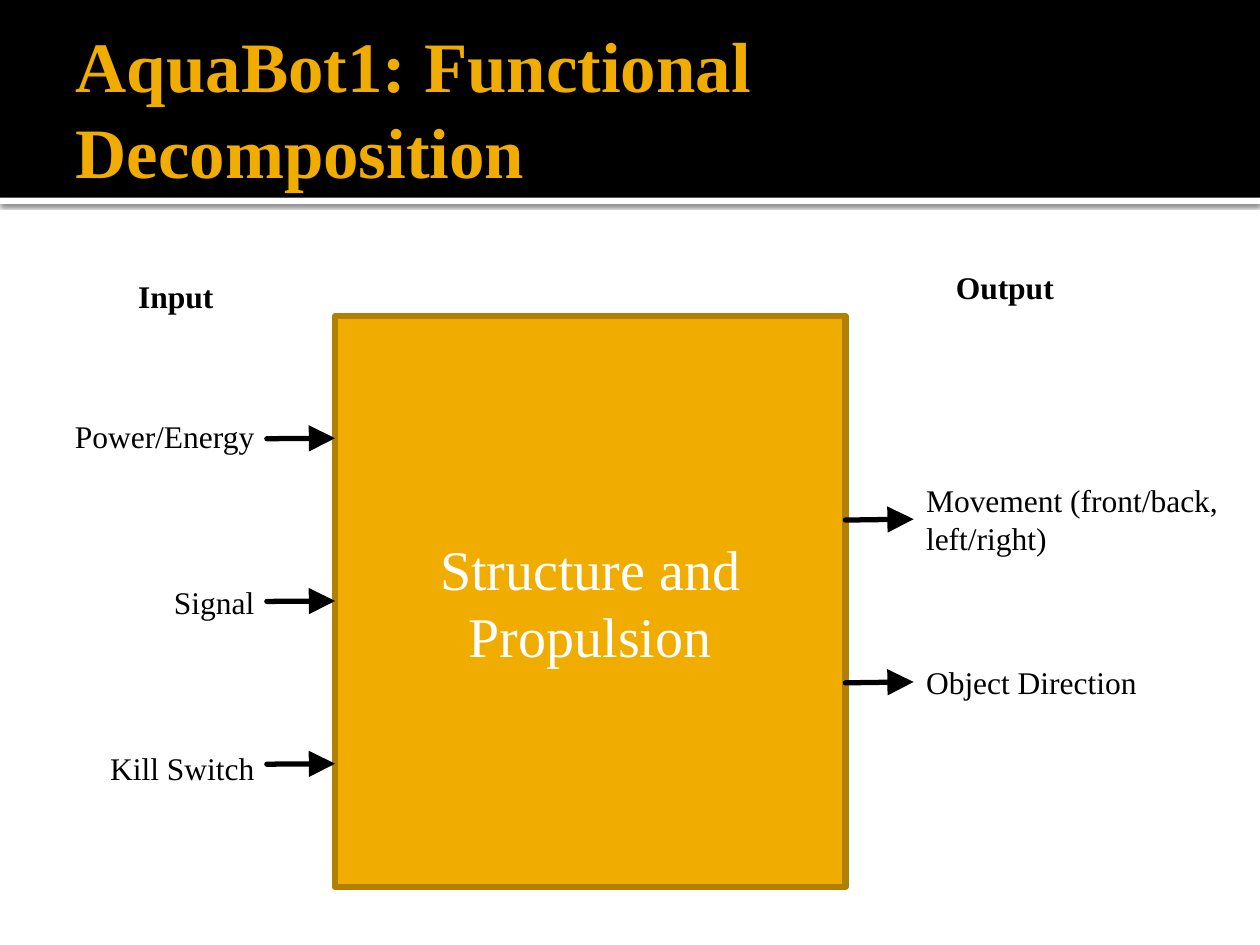
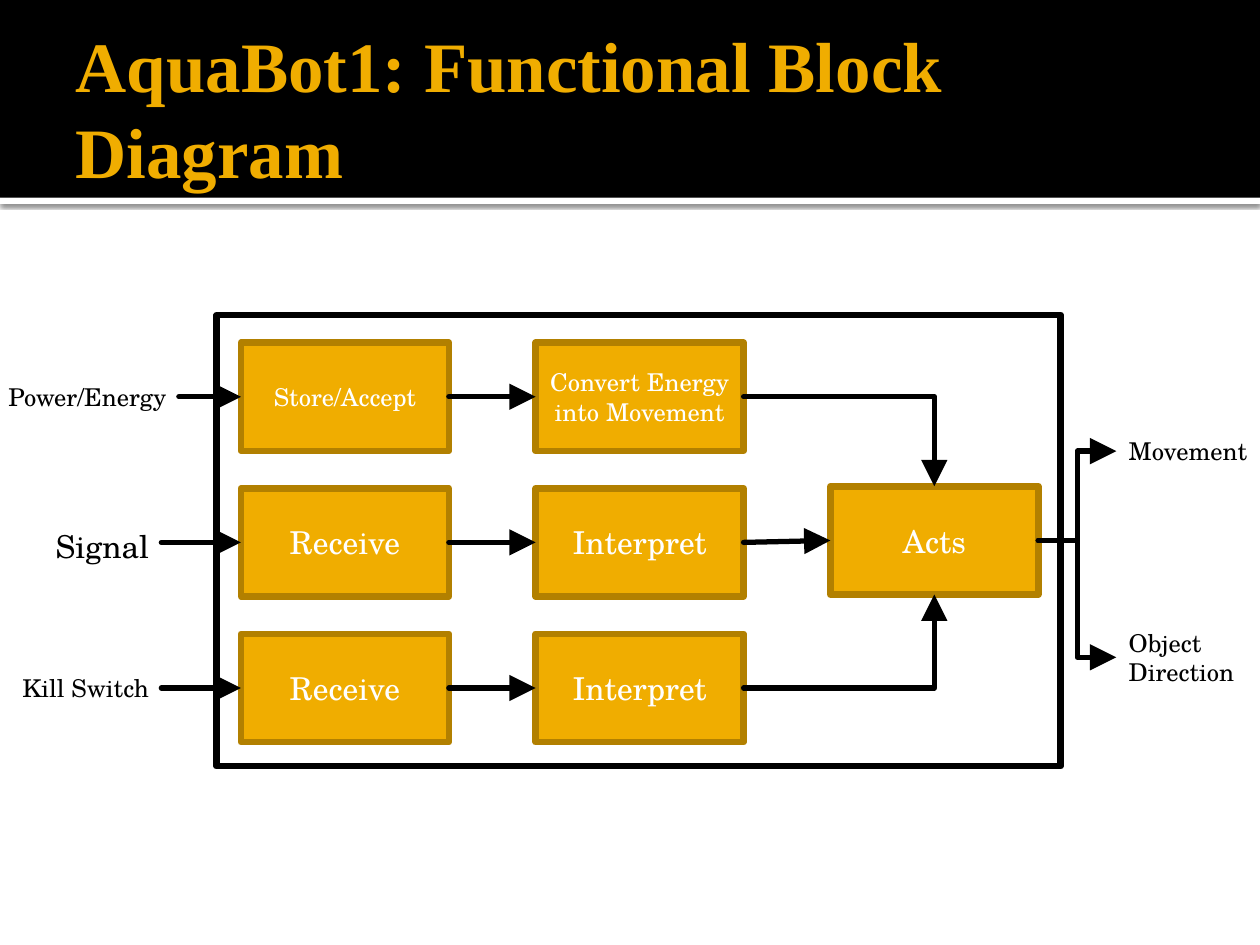
from lxml import etree
from pptx import Presentation
from pptx.dml.color import RGBColor
from pptx.enum.shapes import MSO_CONNECTOR, MSO_SHAPE
from pptx.enum.text import MSO_ANCHOR, MSO_AUTO_SIZE, PP_ALIGN
from pptx.oxml.ns import qn
from pptx.util import Pt

RECTANGLE = MSO_SHAPE.RECTANGLE
STRAIGHT, ELBOW = MSO_CONNECTOR.STRAIGHT, MSO_CONNECTOR.ELBOW
LEFT, CENTER, RIGHT = PP_ALIGN.LEFT, PP_ALIGN.CENTER, PP_ALIGN.RIGHT
MIDDLE = MSO_ANCHOR.MIDDLE
NO_FIT, GROW = MSO_AUTO_SIZE.NONE, MSO_AUTO_SIZE.SHAPE_TO_FIT_TEXT

BLACK = RGBColor(0x00, 0x00, 0x00)
WHITE = RGBColor(0xFF, 0xFF, 0xFF)
GOLD = RGBColor(0xF0, 0xAD, 0x00)
DARK_GOLD = RGBColor(0xB2, 0x80, 0x00)

SERIF = "Times New Roman"
SCHOOL = "TeX Gyre Schola"

PROJECT = "AquaBot1"
SLIDE_WIDTH, SLIDE_HEIGHT = 720, 540
BAND_HEIGHT = 113
OUTLINE, ARROW_LINE = 3.78, 3
RIGHT_SITE, LEFT_SITE = 3, 1


def points(*lengths):
    return [Pt(length) for length in lengths]


def write(frame, text, font, size, color, align=LEFT, bold=False):
    frame.word_wrap = True
    para = frame.paragraphs[0]
    para.alignment = align
    span = para.add_run()
    span.text = text
    span.font.name = font
    span.font.size = Pt(size)
    span.font.bold = bold
    span.font.color.rgb = color
    return para


def add_box(page, box, fill, line=None):
    shape = page.shapes.add_shape(RECTANGLE, *points(*box))
    shape.shadow.inherit = False
    shape.fill.solid()
    shape.fill.fore_color.rgb = fill
    if line is None:
        shape.line.fill.background()
    else:
        shape.line.color.rgb = line
        shape.line.width = Pt(OUTLINE)
    return shape


def add_block(page, box, text, font, size):
    block = add_box(page, box, GOLD, DARK_GOLD)
    block.text_frame.vertical_anchor = MIDDLE
    write(block.text_frame, text, font, size, WHITE, CENTER)
    return block


def add_label(page, box, text, font, size, align=LEFT, bold=False):
    frame = page.shapes.add_textbox(*points(*box)).text_frame
    write(frame, text, font, size, BLACK, align, bold)
    frame.auto_size = GROW


def add_arrow(page, start, end, kind=STRAIGHT, corner=False):
    arrow = page.shapes.add_connector(kind, *points(*start, *end))
    arrow.line.color.rgb = BLACK
    arrow.line.width = Pt(ARROW_LINE)
    properties = arrow.element.spPr
    if corner:
        properties.find(qn("a:prstGeom")).set("prst", "bentConnector2")
    line = properties.find(qn("a:ln"))
    line.set("cap", "rnd")
    etree.SubElement(line, qn("a:round"))
    etree.SubElement(line, qn("a:tailEnd"), type="triangle", w="lg", len="lg")
    etree.SubElement(properties, qn("a:effectLst"))
    return arrow


def link_blocks(page, source, target):
    arrow = add_arrow(page, (0, 0), (0, 0))
    arrow.begin_connect(source, RIGHT_SITE)
    arrow.end_connect(target, LEFT_SITE)


def add_bands(page, layout):
    stripe = add_box(page, (0, BAND_HEIGHT, SLIDE_WIDTH, 3.6), WHITE)
    effects = stripe.element.spPr.find(qn("a:effectLst"))
    shadow = etree.SubElement(effects, qn("a:outerShdw"), blurRad=str(Pt(2.5)),
                              dist=str(Pt(0.8)), dir="5400000", rotWithShape="0")
    color = etree.SubElement(shadow, qn("a:srgbClr"), val=str(BLACK))
    etree.SubElement(color, qn("a:alpha"), val="60000")
    header = add_box(page, (0, 0, SLIDE_WIDTH, BAND_HEIGHT), BLACK)
    first = layout.placeholders[0].element
    for band in (stripe, header):
        first.addprevious(band.element)


def add_title(page, text):
    title = page.shapes.title
    title.left, title.top, title.width, title.height = points(36, 11.7, 648, 98.64)
    frame = title.text_frame
    frame.auto_size = NO_FIT
    frame.vertical_anchor = MIDDLE
    frame.margin_left = Pt(7.2)
    frame.margin_top = frame.margin_right = frame.margin_bottom = Pt(3.6)
    para = write(frame, text, SERIF, 40.5, GOLD, bold=True)
    para.line_spacing = Pt(49)


def draw_decomposition(page, box):
    left, top, width, height = box
    right = left + width
    reach, label_width, label_height, step = 39, 182.2, 28.8, 93
    add_block(page, box, "Structure and Propulsion", SERIF, 32)

    for row, text in enumerate(("Power/Energy", "Signal", "Kill Switch")):
        y = top + 70 + row * step
        add_arrow(page, (left - reach, y), (left, y - 0.3))
        label_top = top + 54 + row * 95
        add_label(page, (left - reach - label_width, label_top, label_width, label_height),
                  text, SERIF, 18, RIGHT)

    outputs = (("Movement (front/back, left/right)", 90.7, 51.1),
               ("Object Direction", 194.4, label_height))
    for row, (text, offset, text_height) in enumerate(outputs):
        y = top + 116.5 + row * step
        add_arrow(page, (right, y), (right + reach, y - 0.5))
        add_label(page, (right + reach, top + offset, label_width, text_height),
                  text, SERIF, 18)

    headings = (("Input", left - label_width, 25.9), ("Output", right, 30.9))
    for text, x, rise in headings:
        add_label(page, (x, top - rise, label_width, label_height),
                  text, SERIF, 18, CENTER, True)


def draw_block_diagram(page, box):
    left, top, width, height = box
    block_width, block_height = 118.8, 61.9
    column_step, row_step = 168.4, 83.2
    columns = [left + 13.9 + column * column_step for column in range(3)]
    rows = [top + 15.8 + row * row_step for row in range(3)]
    centers = [y + block_height / 2 for y in rows]
    add_box(page, box, WHITE, BLACK)

    stages = (("Store/Accept", "Convert Energy into Movement", 14),
              ("Receive", "Interpret", 18),
              ("Receive", "Interpret", 18))
    second_stage = []
    for y, (first_text, second_text, size) in zip(rows, stages):
        first, second = [
            add_block(page, (x, y, block_width, block_height), text, SCHOOL, size)
            for x, text in zip(columns, (first_text, second_text))]
        link_blocks(page, first, second)
        second_stage.append(second)

    acts_top = rows[1] - 1.1
    acts = add_block(page, (columns[2], acts_top, block_width, block_height),
                     "Acts", SCHOOL, 18)
    link_blocks(page, second_stage[1], acts)
    acts_middle = columns[2] + block_width / 2
    second_right = columns[1] + block_width
    for y, end in ((centers[0], acts_top), (centers[2], acts_top + block_height)):
        add_arrow(page, (second_right, y), (acts_middle, end), ELBOW, corner=True)

    inputs = (("Power/Energy", 14, 102.2, 108),
              ("Signal", 18, 92.2, 87.8),
              ("Kill Switch", 14, 92.2, 87.8))
    for y, (text, size, label_right, label_width) in zip(centers, inputs):
        add_label(page, (label_right - label_width, y - 12.2, label_width, 24.4),
                  text, SCHOOL, size, RIGHT)
        add_arrow(page, (label_right, y), (columns[0], y))

    acts_right = columns[2] + block_width
    output_left = left + width + 31.7
    outputs = (("Movement", 77.8, 24.4), ("Object Direction", 195.6, 41))
    for text, offset, label_height in outputs:
        y = top + offset
        add_arrow(page, (acts_right, acts_top + block_height / 2), (output_left, y), ELBOW)
        add_label(page, (output_left, y - label_height / 2, 87.8, label_height),
                  text, SCHOOL, 14)


def main():
    deck = Presentation()
    deck.slide_width, deck.slide_height = points(SLIDE_WIDTH, SLIDE_HEIGHT)
    layout = deck.slide_layouts.get_by_name("Title Only")
    slides = (
        ("Functional Decomposition", draw_decomposition,
         (191.5, 180.7, 291.6, 326.2)),
        ("Functional Block Diagram", draw_block_diagram,
         (123.8, 180, 482.4, 257.8)),
    )
    for number, (topic, draw, box) in enumerate(slides):
        page = deck.slides.add_slide(layout)
        if number == 0:
            add_bands(page, layout)
        add_title(page, f"{PROJECT}: {topic}")
        draw(page, box)
    deck.save("out.pptx")


if __name__ == "__main__":
    main()
